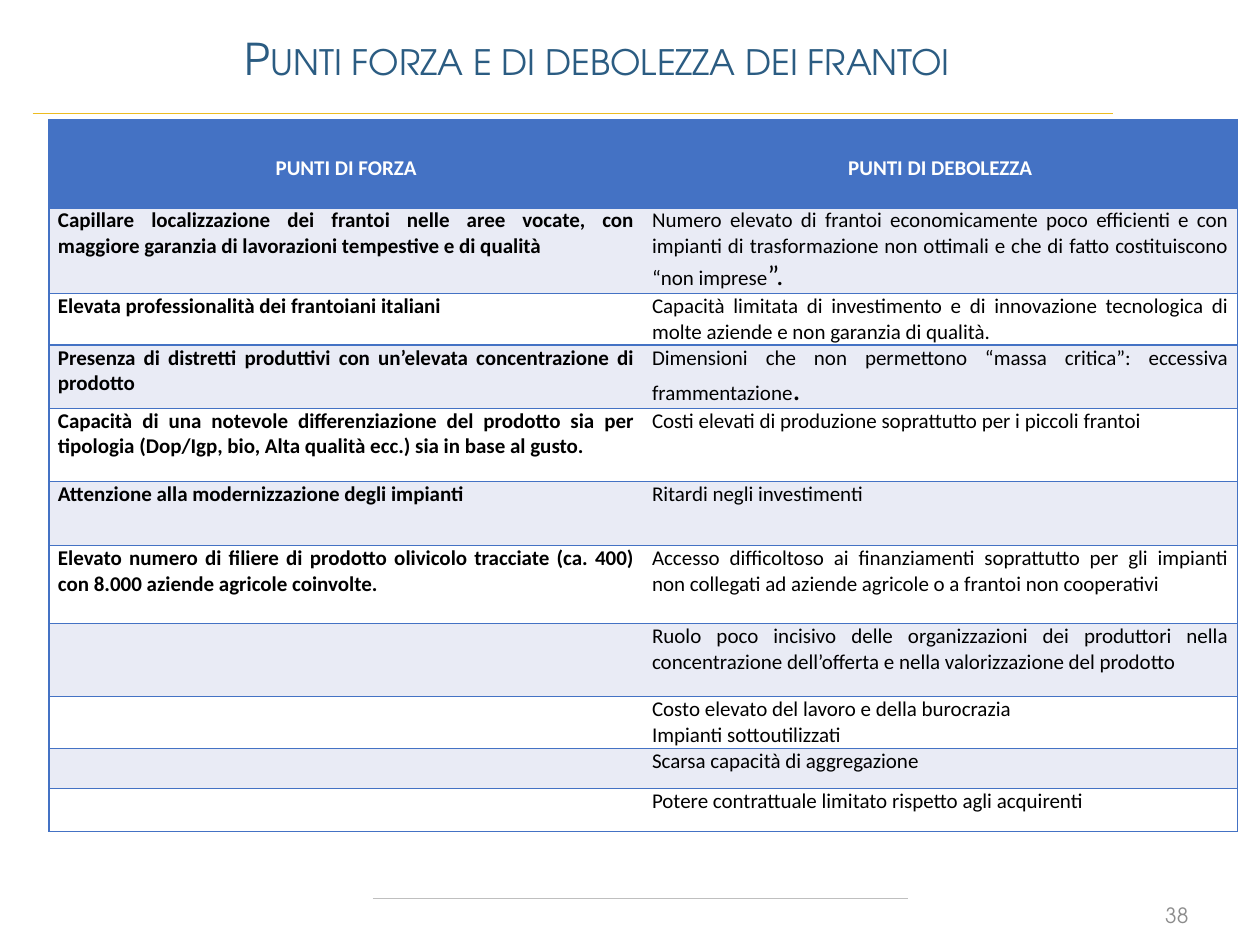
import pptx
import pptx.dml.color
import pptx.enum.text
import pptx.oxml
import pptx.oxml.ns
import pptx.util

BLUE = pptx.dml.color.RGBColor(0x44, 0x72, 0xC4)
BAND = pptx.dml.color.RGBColor(0xE9, 0xEB, 0xF5)
WHITE = pptx.dml.color.RGBColor(0xFF, 0xFF, 0xFF)
BLACK = pptx.dml.color.RGBColor(0x00, 0x00, 0x00)
TITLE_BLUE = pptx.dml.color.RGBColor(0x2B, 0x5C, 0x82)
GOLD = pptx.dml.color.RGBColor(0xED, 0xBC, 0x20)
LIGHT_GREY = pptx.dml.color.RGBColor(0xBF, 0xBF, 0xBF)
GREY = pptx.dml.color.RGBColor(0x8C, 0x8C, 0x8C)

ALIGN = pptx.enum.text.PP_ALIGN
MIDDLE = pptx.enum.text.MSO_ANCHOR.MIDDLE
TOP = pptx.enum.text.MSO_ANCHOR.TOP

HEADINGS = ["PUNTI DI FORZA", "PUNTI DI DEBOLEZZA"]
STRENGTHS = [
    "Capillare localizzazione dei frantoi nelle aree vocate, con maggiore garanzia di lavorazioni tempestive e di qualità",
    "Elevata professionalità dei frantoiani italiani",
    "Presenza di distretti produttivi con un’elevata concentrazione di prodotto",
    "Capacità di una notevole differenziazione del prodotto sia per tipologia (Dop/Igp, bio, Alta qualità ecc.) sia in base al gusto.",
    "Attenzione alla modernizzazione degli impianti",
    "Elevato numero di filiere di prodotto olivicolo tracciate (ca. 400) con 8.000 aziende agricole coinvolte.",
    "", "", "", "",
]
WEAKNESSES = [
    [[("Numero elevato di frantoi economicamente poco efficienti e con impianti di trasformazione non ottimali e che di fatto costituiscono “non imprese", 12), ("”.", 16)]],
    [[("Capacità limitata di investimento e di innovazione tecnologica di molte aziende e non garanzia di qualità.", 12)]],
    [[("Dimensioni che non permettono “massa critica”: eccessiva frammentazione", 12), (".", 18)]],
    [[("Costi elevati di produzione soprattutto per i piccoli frantoi", 12)]],
    [[("Ritardi negli investimenti", 12)]],
    [[("Accesso difficoltoso ai finanziamenti soprattutto per gli impianti non collegati ad aziende agricole o a frantoi non cooperativi", 12)]],
    [[("Ruolo poco incisivo delle organizzazioni dei produttori nella concentrazione dell’offerta e nella valorizzazione del prodotto", 12)]],
    [[("Costo elevato del lavoro e della burocrazia", 12)], [("Impianti sottoutilizzati", 12)]],
    [[("Scarsa capacità di aggregazione", 12)]],
    [[("Potere contrattuale limitato\u00a0rispetto agli acquirenti", 12)]],
]
ROW_HEIGHTS = [7, 6.8, 4.1, 4.1, 5.8, 5.1, 6.2, 5.8, 4.1, 3.2, 3.4]


class SlideBuilder:
    display_font = "TeX Gyre Adventor"
    body_font = "Calibri"
    columns, rows = 100, 75

    def __init__(self, deck):
        self.column = deck.slide_width / self.columns
        self.row = deck.slide_height / self.rows
        self.slide = deck.slides.add_slide(deck.slide_layouts[5])

    def x(self, columns):
        return round(columns * self.column)

    def y(self, rows):
        return round(rows * self.row)

    def run(self, paragraph, text, size, font, color, bold=False):
        run = paragraph.add_run()
        run.text = text
        run.font.size = pptx.util.Pt(size)
        run.font.name = font
        run.font.color.rgb = color
        run.font.bold = bold
        return run

    def title(self, text, left, top, width, height):
        title = self.slide.shapes.title
        title.left, title.top = self.x(left), self.y(top)
        title.width, title.height = self.x(width), self.y(height)
        title.text_frame.vertical_anchor = MIDDLE
        paragraph = title.text_frame.paragraphs[0]
        paragraph.alignment = ALIGN.CENTER
        paragraph.line_spacing = 0.9
        heading = self.run(paragraph, text, 25, self.display_font, TITLE_BLUE)
        heading.font._element.set("cap", "small")

    def rule(self, start, end, top, color, width):
        rule = self.slide.shapes.add_connector(
            pptx.enum.shapes.MSO_CONNECTOR.STRAIGHT,
            self.x(start), self.y(top), self.x(end), self.y(top))
        rule.line.color.rgb = color
        rule.line.width = pptx.util.Pt(width)
        pptx.oxml.ns.qn("a:effectLst")
        rule._element.spPr.append(pptx.oxml.parse_xml(
            f'<a:effectLst {pptx.oxml.ns.nsdecls("a")}/>'))

    def page_number(self, text, left, top, width, height):
        box = self.slide.shapes.add_textbox(
            self.x(left), self.y(top), self.x(width), self.y(height))
        box.text_frame.word_wrap = True
        box.text_frame.vertical_anchor = MIDDLE
        paragraph = box.text_frame.paragraphs[0]
        paragraph.alignment = ALIGN.RIGHT
        self.run(paragraph, text, 12, self.display_font, GREY)

    def table(self, left, top, width, heights):
        table = self.slide.shapes.add_table(
            len(heights), 2, self.x(left), self.y(top),
            self.x(width), self.y(sum(heights))).table
        table.first_row = table.horz_banding = False
        for table_row, height in zip(table.rows, heights):
            table_row.height = self.y(height)
        return table

    def borders(self, cell, sides):
        properties = cell._tc.get_or_add_tcPr()
        for side in "LRTB":
            paint = (f'<a:solidFill><a:srgbClr val="{BLUE}"/></a:solidFill>'
                     if side in sides else "<a:noFill/>")
            properties.append(pptx.oxml.parse_xml(
                f'<a:ln{side} {pptx.oxml.ns.nsdecls("a")} w="12700">{paint}</a:ln{side}>'))

    def cell(self, cell, paragraphs, sides, fill, color=BLACK, bold=False,
             align=ALIGN.JUSTIFY, anchor=TOP, inset=0.7, top_inset=0):
        self.borders(cell, sides)
        cell.fill.solid()
        cell.fill.fore_color.rgb = fill
        cell.margin_left = cell.margin_right = self.x(inset)
        cell.margin_top, cell.margin_bottom = self.y(top_inset), 0
        cell.vertical_anchor = anchor
        for index, runs in enumerate(paragraphs):
            frame = cell.text_frame
            paragraph = frame.add_paragraph() if index else frame.paragraphs[0]
            paragraph.alignment = align
            for text, size in runs:
                self.run(paragraph, text, size, self.body_font, color, bold)


def main():
    deck = pptx.Presentation()
    deck.slide_width = pptx.util.Inches(10)
    deck.slide_height = pptx.util.Inches(7.5)
    builder = SlideBuilder(deck)

    builder.rule(29.6, 72.1, 71.3, LIGHT_GREY, 0.25)
    builder.rule(2.6, 88.3, 9, GOLD, 0.5)
    builder.title("Punti forza e di debolezza dei frantoi", 3.9, 2.1, 87, 5.5)
    builder.page_number("38", 90.9, 71.3, 4.4, 2.6)

    comparison = builder.table(3.9, 9.5, 94.3, ROW_HEIGHTS)
    outer_sides = ["LTB", "RTB"]
    for column, (heading, sides) in enumerate(zip(HEADINGS, outer_sides)):
        builder.cell(comparison.cell(0, column), [[(heading, 12)]], sides, BLUE,
                     color=WHITE, bold=True, align=ALIGN.CENTER, anchor=MIDDLE,
                     inset=0.4, top_inset=0.7)
    for row, (strength, weakness) in enumerate(zip(STRENGTHS, WEAKNESSES), 1):
        fill = BAND if row % 2 else WHITE
        strength_text = [[(strength, 12)]] if strength else []
        builder.cell(comparison.cell(row, 0), strength_text, outer_sides[0], fill, bold=True)
        builder.cell(comparison.cell(row, 1), weakness, outer_sides[1], fill)

    deck.save("out.pptx")


if __name__ == "__main__":
    main()
